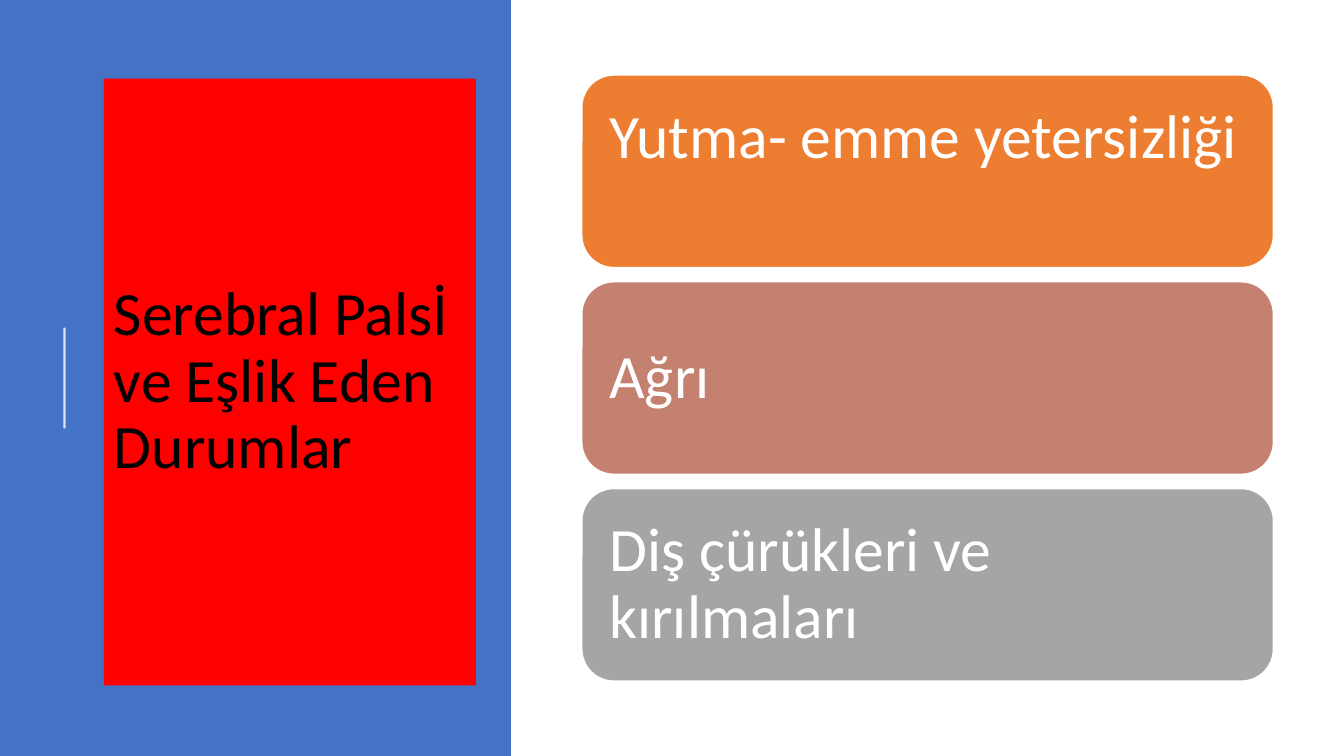
from dataclasses import dataclass

from lxml.etree import SubElement
from pptx import Presentation
from pptx.dml.color import RGBColor
from pptx.enum.shapes import MSO_CONNECTOR, MSO_SHAPE
from pptx.enum.text import MSO_ANCHOR, MSO_AUTO_SIZE, PP_ALIGN
from pptx.oxml.ns import qn
from pptx.shapes.autoshape import Shape
from pptx.slide import Slide
from pptx.util import Pt

PAGE_WIDTH, PAGE_HEIGHT = 960, 540
CARD_LEFT, CARD_TOP, CARD_WIDTH, CARD_HEIGHT = 415.6, 53.6, 494, 137.5
CARD_PITCH = 147.7
CARD_INSET = 13


@dataclass
class Card:
    text: str
    fill: str
    extra_bottom: float = 0


CARDS = [
    Card("Yutma- emme yetersizliği", "ED7D31", extra_bottom=47),
    Card("Ağrı", "C48170"),
    Card("Diş çürükleri ve kırılmaları", "A5A5A5"),
]


def paint(target, colour: str) -> None:
    target.solid()
    target.fore_color.rgb = RGBColor.from_string(colour)


def write(box: Shape, text: str, colour: str) -> None:
    frame = box.text_frame
    frame.text = text
    frame.word_wrap = True
    frame.auto_size = MSO_AUTO_SIZE.NONE
    frame.vertical_anchor = MSO_ANCHOR.MIDDLE
    para = frame.paragraphs[0]
    para.alignment = PP_ALIGN.LEFT
    para.line_spacing = 0.9
    para.font.name = "Calibri"
    para.font.size = Pt(44)
    para.font.color.rgb = RGBColor.from_string(colour)


def add_panel(page: Slide) -> None:
    panel = page.shapes.add_shape(MSO_SHAPE.RECTANGLE, 0, 0, Pt(365), Pt(PAGE_HEIGHT))
    panel.shadow.inherit = False
    paint(panel.fill, "4472C4")
    panel.line.fill.background()
    page.shapes.title.element.addprevious(panel.element)


def add_title(page: Slide) -> None:
    title = page.shapes.title
    title.left, title.top, title.width, title.height = Pt(74.2), Pt(56.2), Pt(265.7), Pt(433.4)
    paint(title.fill, "FF0000")
    write(title, "Serebral Palsİ ve Eşlik Eden Durumlar", "000000")


def add_accent(page: Slide) -> None:
    accent = page.shapes.add_connector(
        MSO_CONNECTOR.STRAIGHT, Pt(46.1), Pt(306), Pt(46.1), Pt(234)
    )
    paint(accent.line.fill, "FFFFFF")
    accent.line.width = Pt(1.5)
    properties = accent.element.spPr
    colour = properties.find(".//" + qn("a:srgbClr"))
    SubElement(colour, qn("a:alpha"), val="80000")
    SubElement(properties, qn("a:effectLst"))


def add_card(page: Slide, card: Card, top: float) -> None:
    box = page.shapes.add_shape(
        MSO_SHAPE.ROUNDED_RECTANGLE, Pt(CARD_LEFT), Pt(top), Pt(CARD_WIDTH), Pt(CARD_HEIGHT)
    )
    box.shadow.inherit = False
    paint(box.fill, card.fill)
    paint(box.line.fill, "FFFFFF")
    box.line.width = Pt(1)
    write(box, card.text, "FFFFFF")
    frame = box.text_frame
    frame.margin_left = frame.margin_right = frame.margin_top = Pt(CARD_INSET)
    frame.margin_bottom = Pt(CARD_INSET + card.extra_bottom)


def main() -> None:
    deck = Presentation()
    deck.slide_width, deck.slide_height = Pt(PAGE_WIDTH), Pt(PAGE_HEIGHT)
    page = deck.slides.add_slide(deck.slide_layouts.get_by_name("Title Only"))
    add_panel(page)
    add_title(page)
    add_accent(page)
    for index, card in enumerate(CARDS):
        add_card(page, card, CARD_TOP + index * CARD_PITCH)
    deck.save("out.pptx")


if __name__ == "__main__":
    main()
